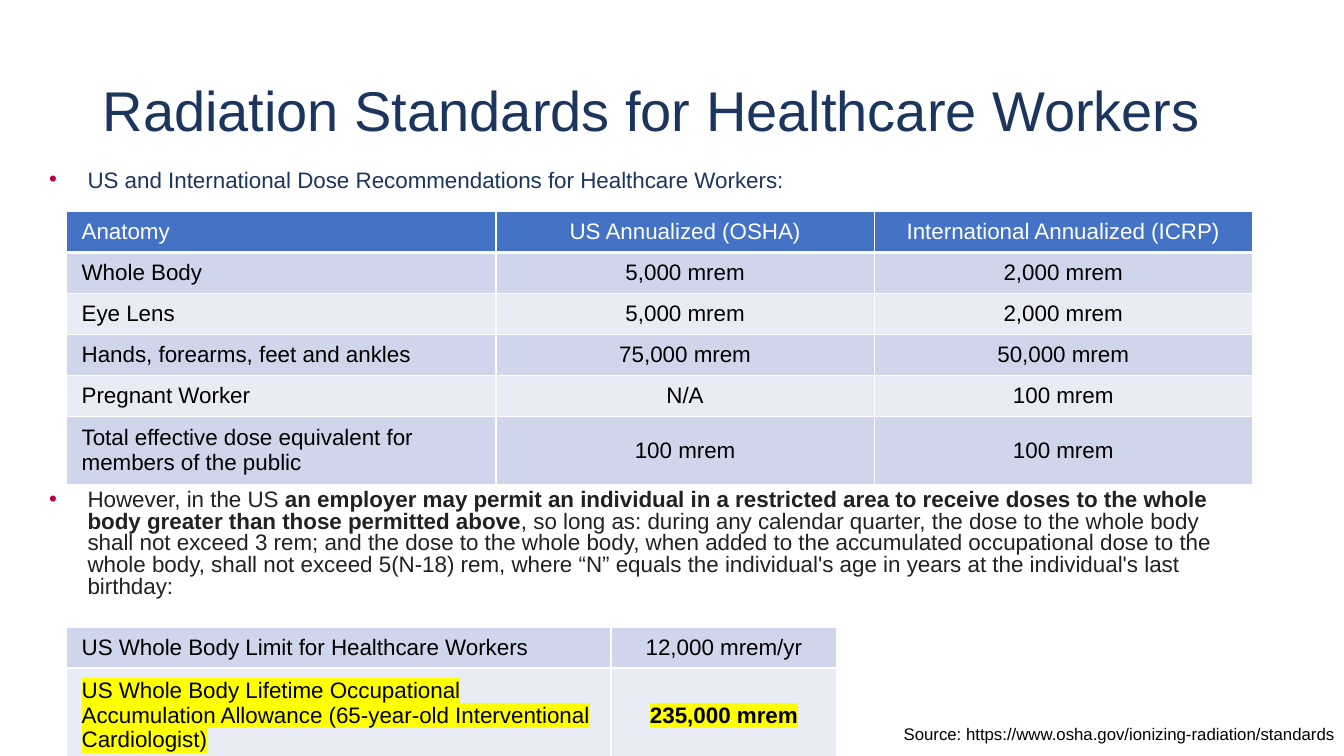
from dataclasses import dataclass

from lxml import etree
from pptx import Presentation
from pptx import util as u
from pptx.dml.color import RGBColor
from pptx.enum import text
from pptx.oxml.ns import qn


@dataclass(frozen=True)
class Theme:
    font: str = "Arial"
    navy: str = "1C355E"
    charcoal: str = "212121"
    black: str = "000000"
    white: str = "FFFFFF"
    bullet: str = "C10230"
    header: str = "4472C4"
    bands: tuple = ("CFD5EA", "E9EBF5")
    marker: str = "FFFF00"
    title_size: int = 40
    body_size: int = 16
    source_size: int = 12


def add_color(parent, tag, color):
    holder = etree.SubElement(parent, qn(tag))
    etree.SubElement(holder, qn("a:srgbClr"), val=color)


class Page:
    def __init__(self, deck, theme):
        self.theme = theme
        self.slide = deck.slides.add_slide(deck.slide_layouts[6])

    def add_span(self, para, words, color, size, bold=False, highlight=None):
        span = para.add_run()
        span.text = words
        span.font.size = u.Pt(size)
        span.font.bold = bold
        span.font.color.rgb = RGBColor.from_string(color)
        if highlight:
            add_color(span.font._element, "a:highlight", highlight)
        span.font.name = self.theme.font

    def add_text(self, area, spans, size, align=text.PP_ALIGN.LEFT,
                 anchor=text.MSO_ANCHOR.TOP, spacing=1.0, bullet=False):
        box = self.slide.shapes.add_textbox(*map(u.Inches, area))
        frame = box.text_frame
        frame.word_wrap = True
        frame.vertical_anchor = anchor
        para = frame.paragraphs[0]
        if bullet:
            properties = para._p.get_or_add_pPr()
            properties.set("marL", str(u.Inches(0.5)))
            properties.set("indent", str(u.Inches(-0.38)))
            add_color(properties, "a:buClr", self.theme.bullet)
            etree.SubElement(properties, qn("a:buFont"), typeface=self.theme.font)
            etree.SubElement(properties, qn("a:buChar"), char="•")
        para.alignment = align
        para.line_spacing = spacing
        for words, color, bold in spans:
            self.add_span(para, words, color, size, bold)

    def add_bullet(self, area, spans):
        self.add_text(area, spans, self.theme.body_size, spacing=0.8, bullet=True)

    def add_borders(self, cell, bottom_width):
        properties = cell._tc.get_or_add_tcPr()
        for side, width in (("L", 1), ("R", 1), ("T", 1), ("B", bottom_width)):
            line = etree.SubElement(properties, qn(f"a:ln{side}"), w=str(u.Pt(width)))
            add_color(line, "a:solidFill", self.theme.white)

    def fill_cell(self, cell, words, fill, color, centered, header=False,
                  bold=False, highlight=None):
        self.add_borders(cell, 3 if header else 1)
        cell.fill.solid()
        cell.fill.fore_color.rgb = RGBColor.from_string(fill)
        cell.margin_left = cell.margin_right = u.Inches(0.15)
        cell.margin_top = cell.margin_bottom = u.Inches(0.07)
        cell.vertical_anchor = text.MSO_ANCHOR.MIDDLE
        para = cell.text_frame.paragraphs[0]
        para.alignment = text.PP_ALIGN.CENTER if centered else text.PP_ALIGN.LEFT
        self.add_span(para, words, color, self.theme.body_size, bold, highlight)

    def add_table(self, left, top, widths, heights, rows, has_header=False,
                  highlighted_row=None):
        area = map(u.Inches, (left, top, sum(widths), sum(heights)))
        table = self.slide.shapes.add_table(len(rows), len(widths), *area).table
        table.first_row = has_header
        for column, width in zip(table.columns, widths):
            column.width = u.Inches(width)
        for row, height in zip(table.rows, heights):
            row.height = u.Inches(height)
        for row_index, row in enumerate(rows):
            header = has_header and row_index == 0
            band = self.theme.bands[(row_index - has_header) % 2]
            marked = row_index == highlighted_row
            for column_index, words in enumerate(row):
                self.fill_cell(
                    table.cell(row_index, column_index), words,
                    self.theme.header if header else band,
                    self.theme.white if header else self.theme.black,
                    centered=column_index > 0, header=header,
                    bold=marked and column_index > 0,
                    highlight=self.theme.marker if marked else None)


DOSE_ROWS = [
    ("Anatomy", "US Annualized (OSHA)", "International Annualized (ICRP)"),
    ("Whole Body", "5,000 mrem", "2,000 mrem"),
    ("Eye Lens", "5,000 mrem", "2,000 mrem"),
    ("Hands, forearms, feet and ankles", "75,000 mrem", "50,000 mrem"),
    ("Pregnant Worker", "N/A", "100 mrem"),
    ("Total effective dose equivalent for members of the public",
     "100 mrem", "100 mrem"),
]
LIMIT_ROWS = [
    ("US Whole Body Limit for Healthcare Workers", "12,000 mrem/yr"),
    ("US Whole Body Lifetime Occupational Accumulation Allowance "
     "(65-year-old Interventional Cardiologist)", "235,000 mrem"),
]


def main():
    deck = Presentation()
    deck.slide_width = u.Inches(13.33)
    deck.slide_height = u.Inches(7.5)
    theme = Theme()
    page = Page(deck, theme)

    page.add_text((0.92, 0.4, 11.5, 1.45),
                  [("Radiation Standards for Healthcare Workers", theme.navy, False)],
                  theme.title_size, anchor=text.MSO_ANCHOR.MIDDLE, spacing=0.9)
    page.add_bullet(
        (0.27, 1.65, 12.14, 0.4),
        [("US and International Dose Recommendations for Healthcare Workers:",
          theme.navy, False)])
    page.add_table(0.66, 2.1, (4.26, 3.75, 3.75), [0.4] * 5 + [0.64],
                   DOSE_ROWS, has_header=True)
    page.add_bullet((0.27, 4.82, 12.14, 1.3), [
        ("However, in the US", theme.charcoal, False),
        (" an employer may permit an individual in a restricted area to receive "
         "doses to the whole body greater than those permitted above",
         theme.charcoal, True),
        (", so long as: during any calendar quarter, the dose to the whole body "
         "shall not exceed 3 rem; and the dose to the whole body, when added to the "
         "accumulated occupational dose to the whole body, shall not exceed 5(N-18) "
         "rem, where “N” equals the individual's age in years at the individual's "
         "last birthday:", theme.charcoal, False),
    ])
    page.add_table(0.66, 6.22, (5.4, 2.24), (0.4, 0.88), LIMIT_ROWS,
                   highlighted_row=1)
    page.add_text((6.67, 7.13, 6.67, 0.3),
                  [("Source: https://www.osha.gov/ionizing-radiation/standards",
                    theme.black, False)],
                  theme.source_size, align=text.PP_ALIGN.RIGHT)
    deck.save("out.pptx")


if __name__ == "__main__":
    main()
